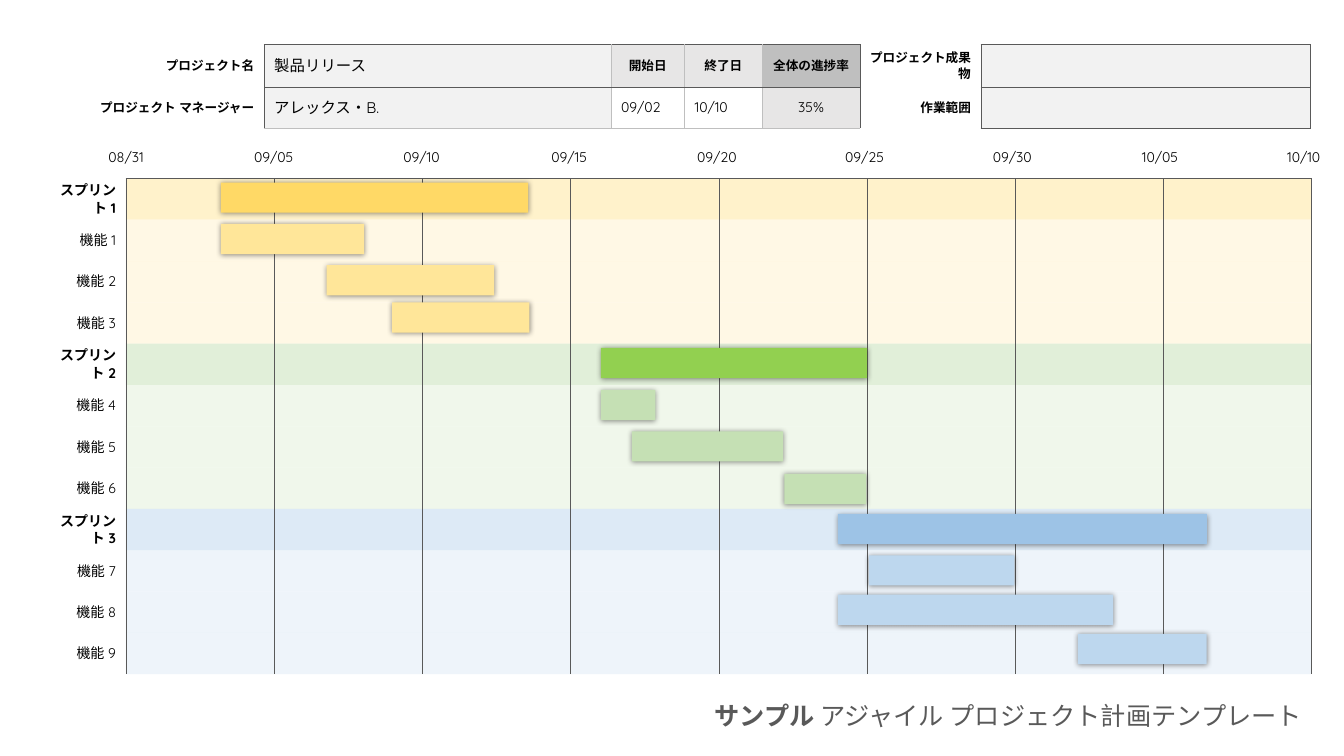
from lxml import etree
from pptx import Presentation
from pptx import util as u
from pptx.dml.color import RGBColor
from pptx.enum import shapes, text
from pptx.oxml.ns import qn

WIDTH, HEIGHT = 13.33, 7.5
LABEL, COLUMN, ROW = 0.89, 1.47, 0.41
DAY = COLUMN / 5
GANTT_LEFT, GANTT_TOP = 0.36, 1.77
AXIS = GANTT_LEFT + LABEL
BODY, TITLE = "Quicksand", "Noto Sans CJK JP"
LINE, PALE_LINE = ("595959", 0.25), ("BFBFBF", 0.5)
LEFT, CENTER, RIGHT = text.PP_ALIGN.LEFT, text.PP_ALIGN.CENTER, text.PP_ALIGN.RIGHT
NO_STYLE = "{2D5ABB26-0587-4C30-8999-92F81FD0307C}"

DATES = ["08/31", "09/05", "09/10", "09/15", "09/20", "09/25", "09/30", "10/05", "10/10"]
SPRINTS = [
    ("FFE699", "FFF2CC", "FFD966", "FFE699",
     [(3.2, 0.1, 10.37), (3.2, 1.1, 4.83), (6.77, 2.1, 5.65), (8.98, 3, 4.63)]),
    ("C5E0B4", "E2F0D9", "92D050", "C5E0B4",
     [(16.02, 4.1, 8.98), (16.02, 5.12, 1.84), (17.07, 6.12, 5.1), (22.21, 7.15, 2.76)]),
    ("BDD7EE", "DEEBF7", "9DC3E6", "BDD7EE",
     [(24.01, 8.12, 12.45), (25.07, 9.12, 4.9), (24.01, 10.07, 9.29), (32.11, 11.02, 4.35)]),
]

HEADER_COLUMNS = [1.81, 3.44, 0.73, 0.77, 0.97, 1.2, 3.27]
HEADER = [
    [("プロジェクト名", 9, True, RIGHT, None), ("製品リリース", 11, False, LEFT, "F2F2F2"),
     ("開始日", 9, True, CENTER, "E7E6E6"), ("終了日", 9, True, CENTER, "E7E6E6"),
     ("全体の進捗率", 9, True, CENTER, "BFBFBF"),
     ("プロジェクト成果物", 9, True, RIGHT, None), ("", 9, False, LEFT, "F2F2F2")],
    [("プロジェクト マネージャー", 9, True, RIGHT, None),
     ("アレックス・B.", 11, False, LEFT, "F2F2F2"),
     ("09/02", 10, False, LEFT, "FFFFFF"), ("10/10", 10, False, LEFT, "FFFFFF"),
     ("35%", 10, False, CENTER, "E7E6E6"),
     ("作業範囲", 9, True, RIGHT, None), ("", 9, False, LEFT, "F2F2F2")],
]


def color(value):
    return RGBColor.from_string(value)


def element(parent, tag, **attributes):
    return etree.SubElement(parent, qn(tag), attributes)


def add_run(paragraph, words, size, bold=False, font=BODY, ink="000000"):
    run = paragraph.add_run()
    run.text = words
    run.font.size = u.Pt(size)
    run.font.bold = bold
    run.font.name = font
    run.font.color.rgb = color(ink)
    element(run.font._element, "a:ea", typeface=font)


def add_text_box(slide, left, top, width, height, align):
    box = slide.shapes.add_textbox(*map(u.Inches, (left, top, width, height)))
    box.text_frame.word_wrap = True
    box.text_frame.auto_size = text.MSO_AUTO_SIZE.SHAPE_TO_FIT_TEXT
    paragraph = box.text_frame.paragraphs[0]
    paragraph.alignment = align
    return paragraph


def add_table(slide, left, top, columns, rows):
    frame = slide.shapes.add_table(
        len(rows), len(columns), *map(u.Inches, (left, top, sum(columns), sum(rows))))
    table = frame.table
    table.first_row = table.horz_banding = False
    table._tbl.tblPr.find(qn("a:tableStyleId")).text = NO_STYLE
    for column, width in zip(table.columns, columns):
        column.width = u.Inches(width)
    for row, height in zip(table.rows, rows):
        row.height = u.Inches(height)
    return table


def fill_cell(cell, fill, borders, alpha=None):
    cell.margin_top = cell.margin_bottom = u.Inches(0.015)
    cell.vertical_anchor = text.MSO_ANCHOR.MIDDLE
    properties = cell._tc.get_or_add_tcPr()
    for side in "LRTB":
        if side in borders:
            ink, weight = borders[side]
            line = element(properties, f"a:ln{side}", w=str(u.Pt(weight)))
            element(element(line, "a:solidFill"), "a:srgbClr", val=ink)
    if fill is None:
        cell.fill.background()
        return
    cell.fill.solid()
    cell.fill.fore_color.rgb = color(fill)
    if alpha:
        shade = properties.find(qn("a:solidFill")).find(qn("a:srgbClr"))
        element(shade, "a:alpha", val=str(alpha * 1000))


def write_cell(cell, words, size, bold, align):
    paragraph = cell.text_frame.paragraphs[0]
    paragraph.alignment = align
    if words:
        add_run(paragraph, words, size, bold)


def header_borders(row, column):
    if column == 0:
        return {"R": LINE}
    if column == 5:
        return {"L": LINE, "R": LINE}
    borders = dict.fromkeys("LRTB", LINE)
    if column < 5:
        if column > 1:
            borders["L"] = PALE_LINE
        if column < 4:
            borders["R"] = PALE_LINE
        borders["B"] = PALE_LINE if row else LINE
    return borders


def add_header(slide):
    table = add_table(slide, 0.81, 0.44, HEADER_COLUMNS, [0.42, 0.41])
    for row, entries in enumerate(HEADER):
        for column, (words, size, bold, align, fill) in enumerate(entries):
            cell = table.cell(row, column)
            fill_cell(cell, fill, header_borders(row, column))
            write_cell(cell, words, size, bold, align)


def add_gantt_grid(slide):
    table = add_table(slide, GANTT_LEFT, GANTT_TOP, [LABEL] + [COLUMN] * 8, [ROW] * 12)
    for row in range(12):
        sprint, feature = divmod(row, 4)
        label = f"機能 {sprint * 3 + feature}" if feature else f"スプリント {sprint + 1}"
        fill_cell(table.cell(row, 0), None, {"R": LINE})
        write_cell(table.cell(row, 0), label, 10, feature == 0, RIGHT)
        borders = {"L": LINE, "R": LINE}
        if row == 0:
            borders["T"] = LINE
        for column in range(1, 9):
            fill_cell(table.cell(row, column), SPRINTS[sprint][min(feature, 1)], borders, 50)


def add_dates(slide):
    for index, date in enumerate(DATES):
        center = min(AXIS + index * 1.465, 12.93)
        add_run(add_text_box(slide, center - 0.31, 1.42, 0.62, 0.27, CENTER), date, 10)


def add_bar(slide, start, row, days, fill):
    bar = slide.shapes.add_shape(
        shapes.MSO_SHAPE.RECTANGLE, u.Inches(AXIS + start * DAY),
        u.Inches(GANTT_TOP + row * ROW), u.Inches(days * DAY), u.Inches(0.3))
    bar.fill.solid()
    bar.fill.fore_color.rgb = color(fill)
    bar.line.fill.background()
    effects = element(bar._element.spPr, "a:effectLst")
    shadow = element(effects, "a:outerShdw", blurRad=str(u.Pt(4)), dist=str(u.Pt(0.5)),
                     dir="5400000", algn="t", rotWithShape="0")
    element(element(shadow, "a:srgbClr", val="000000"), "a:alpha", val="43000")


def add_title(slide):
    paragraph = add_text_box(slide, 5.82, 0.92 * HEIGHT, 7.19, 0.4, RIGHT)
    add_run(paragraph, "サンプル", 18, True, TITLE, "595959")
    add_run(paragraph, " アジャイル プロジェクト計画テンプレート", 18, False, TITLE, "595959")


def main():
    presentation = Presentation()
    presentation.slide_width = u.Inches(WIDTH)
    presentation.slide_height = u.Inches(HEIGHT)
    slide = presentation.slides.add_slide(presentation.slide_layouts[6])
    add_title(slide)
    add_gantt_grid(slide)
    add_dates(slide)
    for _, _, sprint_fill, feature_fill, bars in SPRINTS:
        for index, (start, row, days) in enumerate(bars):
            add_bar(slide, start, row, days, feature_fill if index else sprint_fill)
    add_header(slide)
    presentation.save("out.pptx")


if __name__ == "__main__":
    main()
